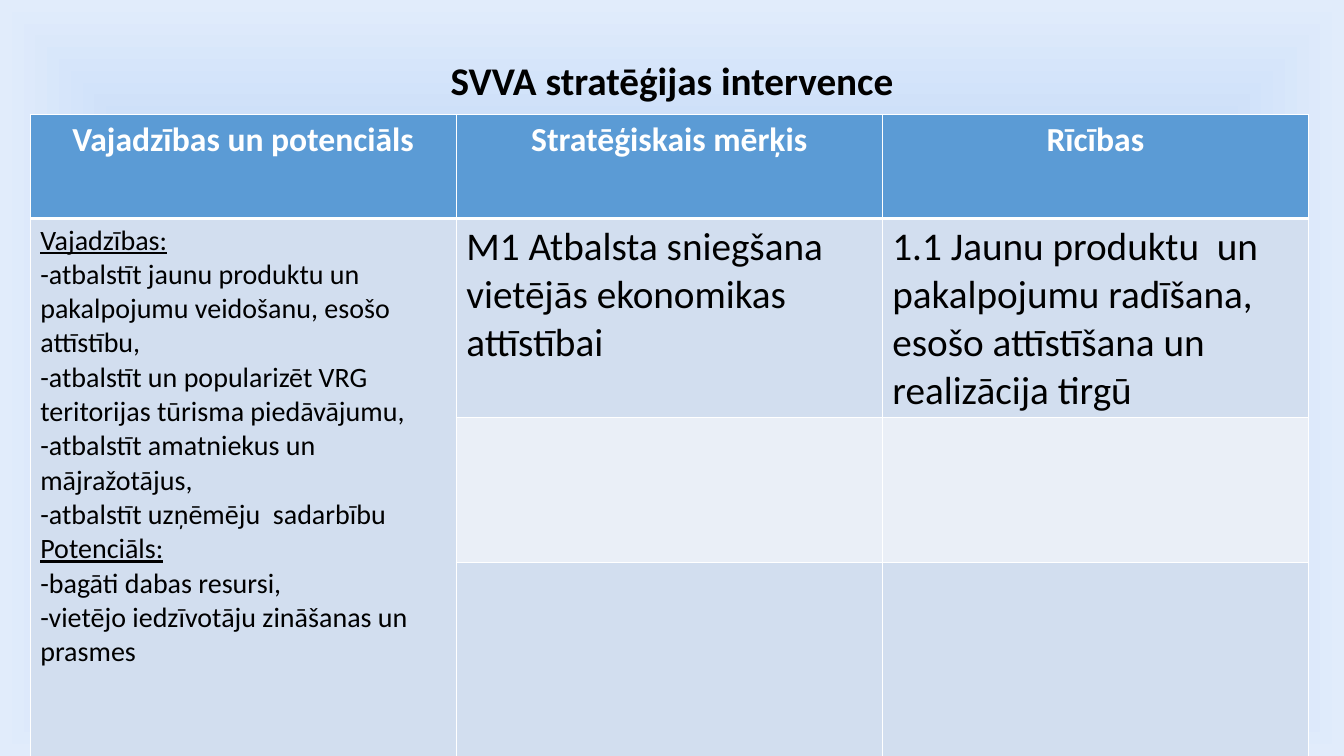
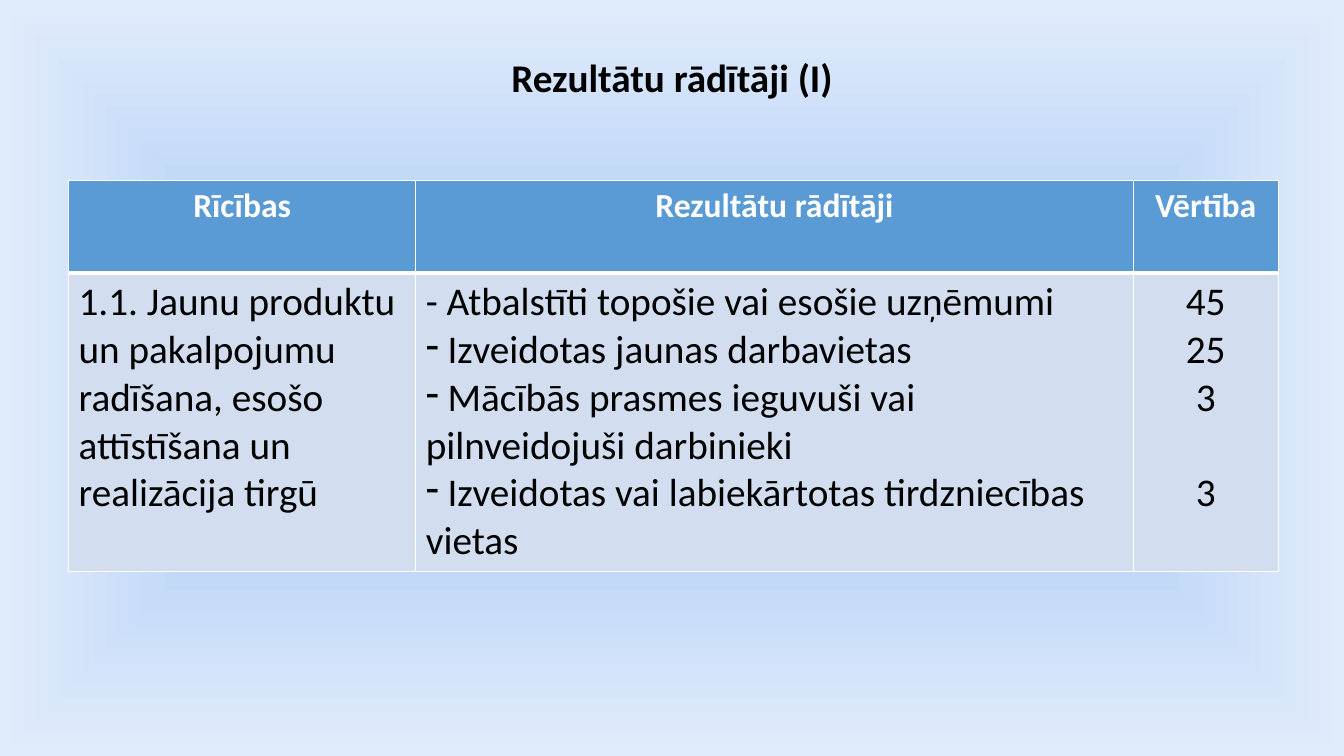
from dataclasses import dataclass

from lxml.etree import SubElement
from pptx import Presentation
from pptx.dml.color import RGBColor
from pptx.enum.text import MSO_ANCHOR, PP_ALIGN
from pptx.oxml.ns import qn
from pptx.util import Pt

FONT = "Calibri"
BLACK = RGBColor(0x00, 0x00, 0x00)
WHITE = RGBColor(0xFF, 0xFF, 0xFF)
HEADER_BLUE = RGBColor(0x5B, 0x9B, 0xD5)
BAND_DARK = RGBColor(0xD2, 0xDE, 0xEF)
BAND_LIGHT = RGBColor(0xEA, 0xEF, 0xF7)
GRADIENT = [
    (0, RGBColor(0xFF, 0xD9, 0x66)),
    (50, RGBColor(0xC1, 0xD8, 0xF8)),
    (100, RGBColor(0xE1, 0xEC, 0xFB)),
]
TITLE_SIZE, HEADER_SIZE, BODY_SIZE, NEEDS_SIZE = 28, 24, 28, 20
BODY_LINE = 34.2


@dataclass
class Line:
    text: str
    size: float = BODY_SIZE
    color: RGBColor = BLACK
    bold: bool = False
    underline: bool = False
    dash: bool = False
    centered: bool = False
    gap: float = 0


def header(text):
    return [Line(text, HEADER_SIZE, WHITE, bold=True, centered=True)]


def needs(text, underline=False):
    return Line(text, NEEDS_SIZE, underline=underline)


def value(text, gap=0):
    return Line(text, centered=True, gap=gap)


SLIDES = [
    {
        "title": "SVVA stratēģijas intervence",
        "title_box": (66, 29, 828, 60.5),
        "table_at": (21.6, 82),
        "columns": [304.33] * 3,
        "rows": [74, 142, 104, 157],
        "merge": ((1, 0), (3, 0)),
        "cells": [
            [header("Vajadzības un potenciāls"), header("Stratēģiskais mērķis"), header("Rīcības")],
            [
                [
                    needs("Vajadzības:", underline=True),
                    needs("-atbalstīt jaunu produktu un pakalpojumu veidošanu, esošo attīstību,"),
                    needs("-atbalstīt un popularizēt VRG teritorijas tūrisma piedāvājumu,"),
                    needs("-atbalstīt amatniekus un mājražotājus,"),
                    needs("-atbalstīt uzņēmēju  sadarbību"),
                    needs("Potenciāls:", underline=True),
                    needs("-bagāti dabas resursi,"),
                    needs("-vietējo iedzīvotāju zināšanas un prasmes"),
                ],
                [Line("M1 Atbalsta sniegšana vietējās ekonomikas attīstībai")],
                [Line("1.1 Jaunu produktu  un pakalpojumu radīšana, esošo attīstīšana un realizācija tirgū")],
            ],
            [[], [], []],
            [[], [], []],
        ],
    },
    {
        "title": "Rezultātu rādītāji (I)",
        "title_box": (66, 23, 828, 68),
        "table_at": (49, 129),
        "columns": [248, 512.5, 103.5],
        "rows": [66, 213],
        "merge": None,
        "cells": [
            [header("Rīcības"), header("Rezultātu rādītāji"), header("Vērtība")],
            [
                [Line("1.1. Jaunu produktu un pakalpojumu radīšana, esošo attīstīšana un realizācija tirgū")],
                [
                    Line("- Atbalstīti topošie vai esošie uzņēmumi"),
                    Line(" Izveidotas jaunas darbavietas", dash=True),
                    Line(" Mācībās prasmes ieguvuši vai pilnveidojuši darbinieki", dash=True),
                    Line(" Izveidotas vai labiekārtotas tirdzniecības vietas", dash=True),
                ],
                [value("45"), value("25"), value("3"), value("3", gap=BODY_LINE)],
            ],
        ],
    },
]


def add_color(parent, color):
    SubElement(parent, qn("a:srgbClr"), val=str(color))


def paint_background(master):
    fill = master.background.fill
    fill.gradient()
    gradient = master.element.find(".//" + qn("a:gradFill"))
    for child in list(gradient):
        gradient.remove(child)
    stops = SubElement(gradient, qn("a:gsLst"))
    for position, color in GRADIENT:
        add_color(SubElement(stops, qn("a:gs"), pos=str(position * 1000)), color)
    shape_path = SubElement(gradient, qn("a:path"), {"path": "shape"})
    SubElement(shape_path, qn("a:fillToRect"), {side: "50000" for side in "ltrb"})


def write_line(paragraph, line):
    paragraph.alignment = PP_ALIGN.CENTER if line.centered else PP_ALIGN.LEFT
    if line.gap:
        paragraph.space_before = Pt(line.gap)
    if line.dash:
        properties = paragraph._p.get_or_add_pPr()
        properties.set("marL", "0")
        properties.set("indent", "0")
        SubElement(properties, qn("a:buChar"), char="-")
    run = paragraph.add_run()
    run.text = line.text
    font = run.font
    font.name, font.size, font.color.rgb = FONT, Pt(line.size), line.color
    font.bold, font.underline = line.bold, line.underline


def write_lines(frame, lines):
    for index, line in enumerate(lines):
        write_line(frame.add_paragraph() if index else frame.paragraphs[0], line)


def add_title(slide, text, box):
    frame = slide.shapes.add_textbox(*map(Pt, box)).text_frame
    frame.word_wrap = True
    frame.vertical_anchor = MSO_ANCHOR.MIDDLE
    write_lines(frame, [Line(text, TITLE_SIZE, bold=True, centered=True)])
    frame.paragraphs[0].line_spacing = 0.9


def style_cell(cell, row):
    widths = {"L": 1, "R": 1, "T": 3 if row == 1 else 1, "B": 3 if row == 0 else 1}
    properties = cell._tc.get_or_add_tcPr()
    for side, width in widths.items():
        border = SubElement(properties, qn(f"a:ln{side}"), w=str(Pt(width)))
        add_color(SubElement(border, qn("a:solidFill")), WHITE)
    cell.fill.solid()
    cell.fill.fore_color.rgb = HEADER_BLUE if row == 0 else BAND_DARK if row % 2 else BAND_LIGHT


def add_grid(slide, content):
    columns, rows = content["columns"], content["rows"]
    size = (sum(columns), sum(rows))
    table = slide.shapes.add_table(
        len(rows), len(columns), *map(Pt, content["table_at"] + size)
    ).table
    for column, width in zip(table.columns, columns):
        column.width = Pt(width)
    for row, height in zip(table.rows, rows):
        row.height = Pt(height)
    for r, row_cells in enumerate(content["cells"]):
        for c, lines in enumerate(row_cells):
            style_cell(table.cell(r, c), r)
            write_lines(table.cell(r, c).text_frame, lines)
    if content["merge"]:
        first, last = content["merge"]
        table.cell(*first).merge(table.cell(*last))


def main():
    deck = Presentation()
    deck.slide_width, deck.slide_height = Pt(960), Pt(540)
    paint_background(deck.slide_master)
    for content in SLIDES:
        slide = deck.slides.add_slide(deck.slide_layouts[6])
        add_title(slide, content["title"], content["title_box"])
        add_grid(slide, content)
    deck.save("out.pptx")


if __name__ == "__main__":
    main()
